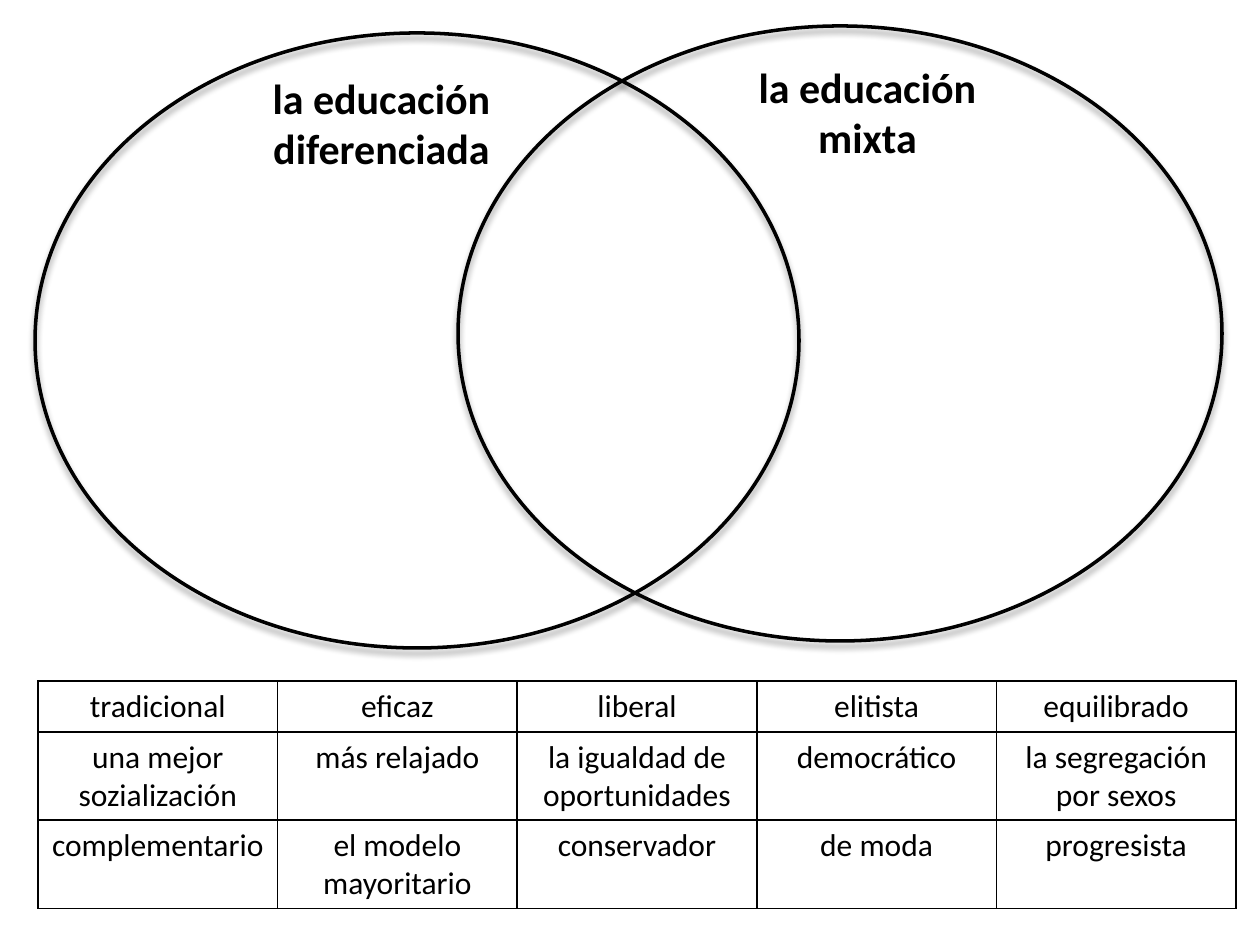
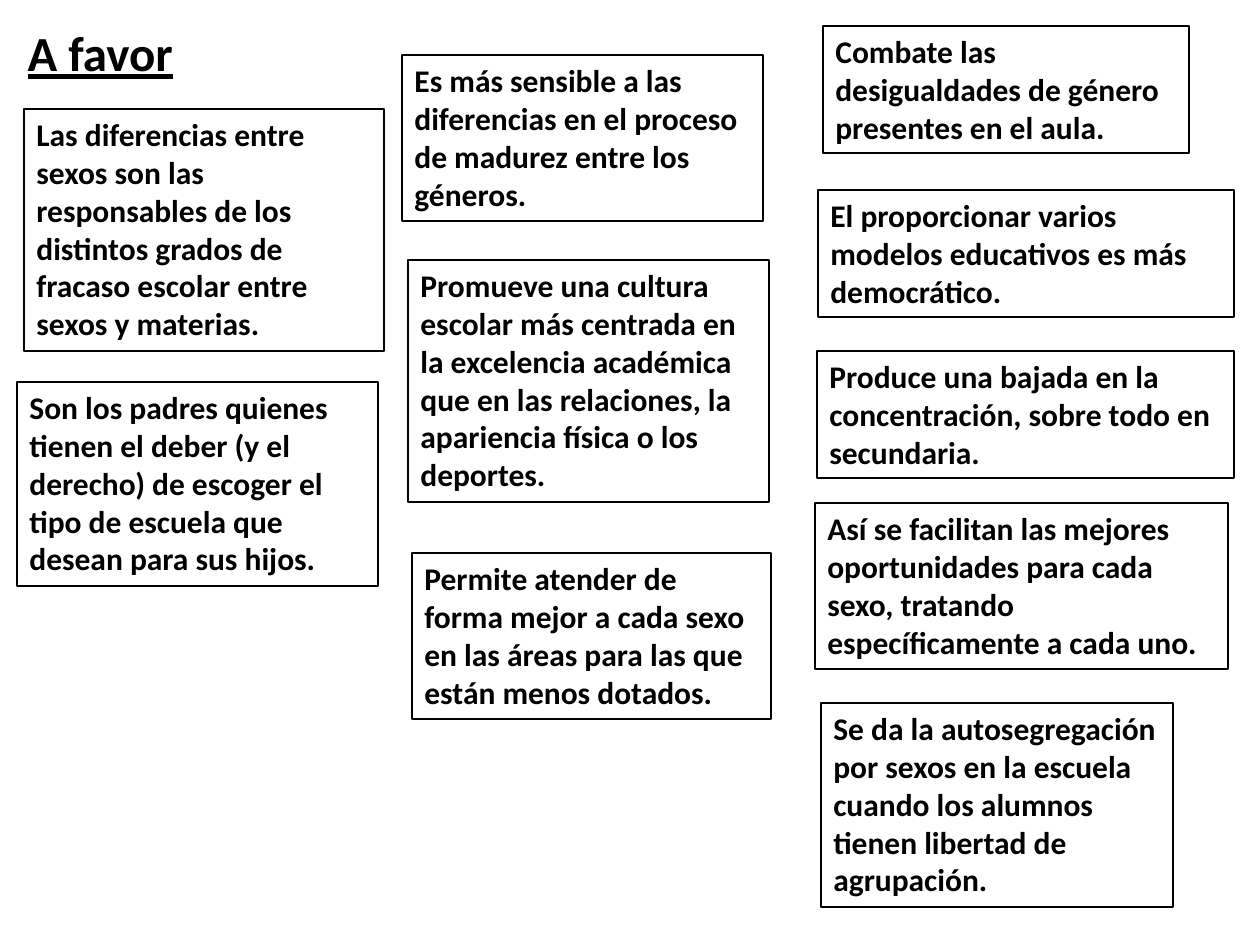
from lxml.etree import SubElement
from pptx import Presentation
from pptx.dml.color import RGBColor
from pptx.enum.shapes import MSO_SHAPE
from pptx.enum.text import MSO_ANCHOR, MSO_AUTO_SIZE, PP_ALIGN
from pptx.oxml import parse_xml
from pptx.oxml.ns import nsdecls, qn
from pptx.util import Pt

PX_PER_INCH = 126
BLACK = RGBColor(0x00, 0x00, 0x00)
TERM = {"name": "Calibri", "size": Pt(18), "bold": False}
ARGUMENT = {"name": "Calibri", "size": Pt(18), "bold": True}
CIRCLE_NAME = {"name": "Calibri", "size": Pt(24), "bold": True}
HEADING = {"name": "Calibri", "size": Pt(28), "bold": True, "underline": True}


def px(*lengths):
    return [length * 914400 // PX_PER_INCH for length in lengths]


def write(frame, text, style, align):
    frame.text = text
    frame.word_wrap = True
    frame.vertical_anchor = MSO_ANCHOR.TOP
    paragraph = frame.paragraphs[0]
    paragraph.alignment = align
    font = paragraph.runs[0].font
    font.color.rgb = BLACK
    for attribute, value in style.items():
        setattr(font, attribute, value)


deck = Presentation()
deck.slide_width, deck.slide_height = px(1260, 945)

venn = deck.slides.add_slide(deck.slide_layouts[6])

for left, top in [(35, 33), (458, 26)]:
    circle = venn.shapes.add_shape(MSO_SHAPE.OVAL, *px(left, top, 764, 615))
    circle.fill.background()
    circle.line.color.rgb = BLACK
    circle.line.width = Pt(2)
    circle.shadow.inherit = False
    circle._element.spPr.find(qn("a:effectLst")).append(parse_xml(
        f'<a:outerShdw {nsdecls("a")} blurRad="50800" dist="38100" dir="5400000" '
        'rotWithShape="0"><a:srgbClr val="000000"><a:alpha val="40000"/>'
        '</a:srgbClr></a:outerShdw>'))

for left, top, model in [
    (719, 55, "la educación mixta"),
    (233, 66, "la educación diferenciada"),
]:
    circle_name = venn.shapes.add_textbox(*px(left, top, 297, 115))
    write(circle_name.text_frame, model, CIRCLE_NAME, PP_ALIGN.CENTER)

TERMS = [
    ["tradicional", "eficaz", "liberal", "elitista", "equilibrado"],
    ["una mejor sozialización", "más relajado", "la igualdad de oportunidades",
     "democrático", "la segregación por sexos"],
    ["complementario", "el modelo mayoritario", "conservador", "de moda",
     "progresista"],
]
terms = venn.shapes.add_table(3, 5, *px(38, 681, 1198, 227)).table
terms.first_row = False
terms.horz_banding = False
for row, height, words in zip(terms.rows, px(51, 88, 88), TERMS):
    row.height = height
    for cell, word in zip(row.cells, words):
        write(cell.text_frame, word, TERM, PP_ALIGN.CENTER)
        cell_format = cell._tc.get_or_add_tcPr()
        for side in ("a:lnL", "a:lnR", "a:lnT", "a:lnB"):
            border = SubElement(cell_format, qn(side), w=str(Pt(1)))
            border_fill = SubElement(border, qn("a:solidFill"))
            SubElement(border_fill, qn("a:srgbClr"), val=str(BLACK))
        cell.fill.background()

in_favour = deck.slides.add_slide(deck.slide_layouts[5])

heading = in_favour.shapes.title
heading.left, heading.top, heading.width, heading.height = px(15, 16, 407, 72)
write(heading.text_frame, "A favor", HEADING, PP_ALIGN.LEFT)
heading.text_frame.auto_size = MSO_AUTO_SIZE.NONE

ARGUMENTS = [
    (24, 109, 360, 242, "Las diferencias entre sexos son las responsables de los "
     "distintos grados de fracaso escolar entre sexos y materias."),
    (17, 382, 361, 204, "Son los padres quienes tienen el deber (y el derecho) de "
     "escoger el tipo de escuela que desean para sus hijos."),
    (402, 55, 361, 166, "Es más sensible a las diferencias en el proceso de madurez "
     "entre los géneros."),
    (408, 260, 361, 242, "Promueve una cultura escolar más centrada en la excelencia "
     "académica que en las relaciones, la apariencia física o los deportes."),
    (412, 553, 359, 166, "Permite atender de forma mejor a cada sexo en las áreas "
     "para las que están menos dotados."),
    (823, 26, 366, 127, "Combate las desigualdades de género presentes en el aula."),
    (818, 190, 416, 127, "El proporcionar varios modelos educativos es más "
     "democrático."),
    (817, 351, 417, 127, "Produce una bajada en la concentración, sobre todo en "
     "secundaria."),
    (815, 503, 413, 166, "Así se facilitan las mejores oportunidades para cada sexo, "
     "tratando específicamente a cada uno."),
    (821, 703, 352, 204, "Se da la autosegregación por sexos en la escuela cuando "
     "los alumnos tienen libertad de agrupación."),
]
for *place, argument in ARGUMENTS:
    card = in_favour.shapes.add_shape(MSO_SHAPE.RECTANGLE, *px(*place))
    card.fill.background()
    card.line.color.rgb = BLACK
    card.line.width = Pt(0.75)
    card.shadow.inherit = False
    write(card.text_frame, argument, ARGUMENT, PP_ALIGN.LEFT)

deck.save("out.pptx")
